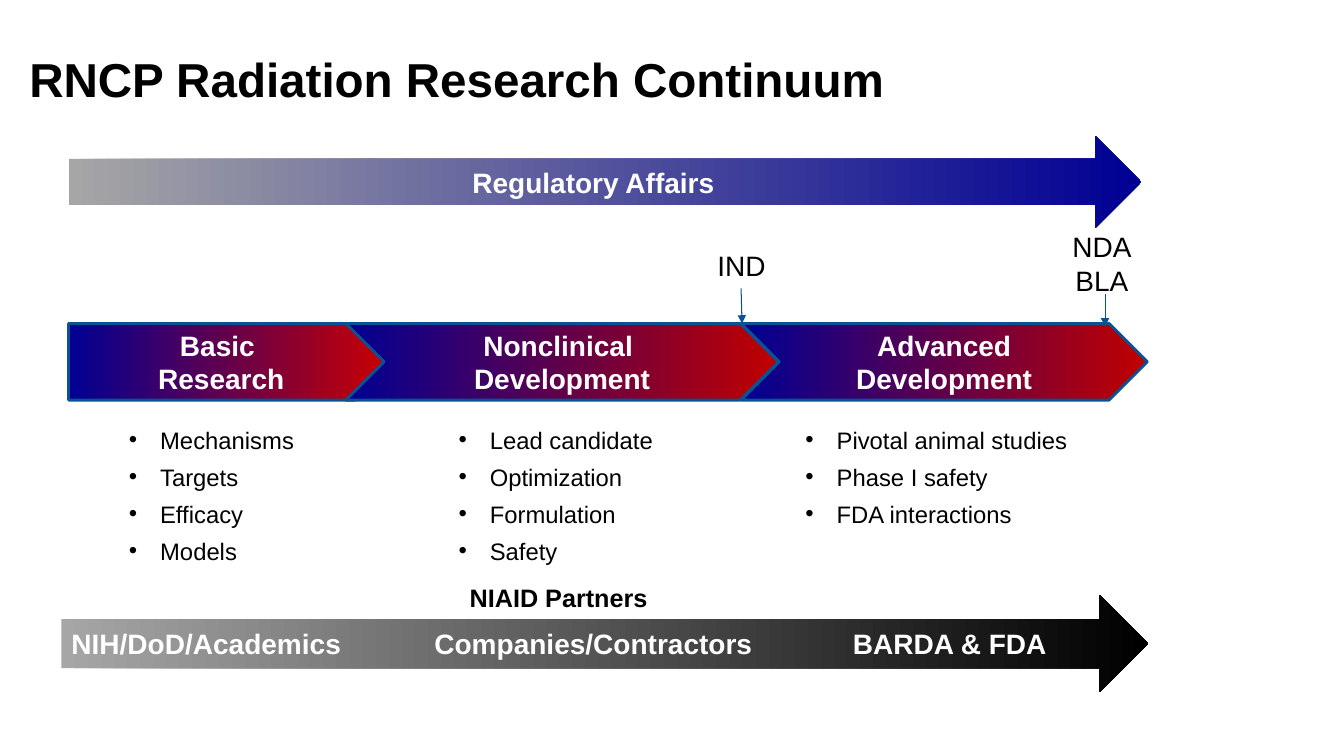
from lxml import etree
from pptx import Presentation
from pptx.dml.color import RGBColor
from pptx.enum.shapes import MSO_CONNECTOR, MSO_SHAPE
from pptx.enum.text import MSO_ANCHOR, MSO_AUTO_SIZE, PP_ALIGN
from pptx.oxml.ns import qn
from pptx.util import Pt

PX = 9144  # 100 px to the inch
LEFT, CENTER = PP_ALIGN.LEFT, PP_ALIGN.CENTER
TOP, MIDDLE, BOTTOM = MSO_ANCHOR.TOP, MSO_ANCHOR.MIDDLE, MSO_ANCHOR.BOTTOM
ARROW, PENTAGON, CHEVRON = MSO_SHAPE.RIGHT_ARROW, MSO_SHAPE.PENTAGON, MSO_SHAPE.CHEVRON
STRAIGHT = MSO_CONNECTOR.STRAIGHT
NO_AUTOFIT = MSO_AUTO_SIZE.NONE
NAVY, GREY, BLACK, WHITE = "000094", "A6A6A6", "000000", "FFFFFF"


def write(shape, lines, size=20, color=BLACK, bold=False, align=LEFT,
          anchor=TOP, bullets=False, tabs=()):
    frame = shape.text_frame
    frame.word_wrap = True
    frame.auto_size = NO_AUTOFIT
    frame.vertical_anchor = anchor
    for index, line in enumerate(lines):
        para = frame.paragraphs[0] if index == 0 else frame.add_paragraph()
        para.alignment = align
        properties = para._p.get_or_add_pPr()
        if bullets:
            para.space_after = Pt(6)
            properties.set("marL", str(31 * PX))
            properties.set("indent", str(-31 * PX))
            etree.SubElement(properties, qn("a:buFont"), typeface="Arial")
            etree.SubElement(properties, qn("a:buChar"), char="•")
        if tabs:
            stops = etree.SubElement(properties, qn("a:tabLst"))
            for position in tabs:
                etree.SubElement(stops, qn("a:tab"), pos=str(position * PX), algn="l")
        span = para.add_run()
        span.text = line
        span.font.name = "Arial"
        span.font.size = Pt(size)
        span.font.bold = bold
        span.font.color.rgb = RGBColor.from_string(color)


def add_band(kind, bounds, start, end, outline=None):
    band = page.shapes.add_shape(kind, *(value * PX for value in bounds))
    band.shadow.inherit = False
    band.fill.gradient()
    band.fill.gradient_angle = 0
    for stop, color in zip(band.fill.gradient_stops, (start, end)):
        stop.color.rgb = RGBColor.from_string(color)
    if outline:
        band.line.color.rgb = RGBColor.from_string(outline)
        band.line.width = Pt(2)
    else:
        band.line.fill.background()
    return band


deck = Presentation()
deck.slide_width, deck.slide_height = 1333 * PX, 750 * PX
page = deck.slides.add_slide(deck.slide_layouts[5])

# Title
title = page.shapes.title
title.left, title.top, title.width, title.height = 29 * PX, 6 * PX, 1100 * PX, 100 * PX
title.text_frame.margin_left = title.text_frame.margin_right = 0
title.text_frame.margin_top, title.text_frame.margin_bottom = 5 * PX, 0
write(title, ["RNCP Radiation Research Continuum"], size=34, bold=True, anchor=BOTTOM)

# Regulatory arrow
regulatory = add_band(ARROW, (68, 135, 1064, 91), GREY, NAVY)
write(regulatory, ["Regulatory Affairs"], color=WHITE, bold=True, align=CENTER, anchor=MIDDLE)

# Research stages
stages = [
    (PENTAGON, 68, 322, "CC0000", ["Basic ", "Research"]),
    (CHEVRON, 735, 403, "C00000", ["Advanced", "Development"]),
    (CHEVRON, 343, 429, "C00000", ["Nonclinical ", "Development"]),
]
for kind, left, width, end, lines in stages:
    stage = add_band(kind, (left, 321, width, 76), NAVY, end, outline="0B5292")
    write(stage, lines, color=WHITE, bold=True, align=CENTER, anchor=MIDDLE)

# Partner arrow
partners = add_band(ARROW, (61, 590, 1078, 97), GREY, BLACK)
write(partners, ["NIH/DoD/Academics\tCompanies/Contractors\tBARDA & FDA"],
      color=WHITE, bold=True, anchor=MIDDLE, tabs=(360, 775))

# Text boxes: activities, partner heading, milestones
activity = {"size": 17, "bullets": True}
milestone = {"align": CENTER}
texts = [
    ((118, 417, 188, 150), ["Mechanisms", "Targets", "Efficacy", "Models"], activity),
    ((445, 417, 215, 150), ["Lead candidate", "Optimization", "Formulation", "Safety"], activity),
    ((789, 417, 356, 113), ["Pivotal animal studies", "Phase I safety", "FDA interactions"], activity),
    ((456, 573, 241, 40), ["NIAID Partners"], {"size": 18, "bold": True}),
    ((698, 242, 75, 44), ["IND"], milestone),
    ((1053, 223, 80, 77), ["NDA", "BLA"], milestone),
]
for bounds, lines, style in texts:
    box = page.shapes.add_textbox(*(value * PX for value in bounds))
    write(box, lines, **style)

# Milestone pointers
for ends in [(735, 286, 736, 321), (1096, 292, 1096, 324)]:
    pointer = page.shapes.add_connector(STRAIGHT, *(value * PX for value in ends))
    pointer.line.color.rgb = RGBColor.from_string("095295")
    pointer.line.width = Pt(0.75)
    etree.SubElement(pointer.line._get_or_add_ln(), qn("a:tailEnd"), type="triangle")
    etree.SubElement(pointer._element.spPr, qn("a:effectLst"))

deck.save("out.pptx")
